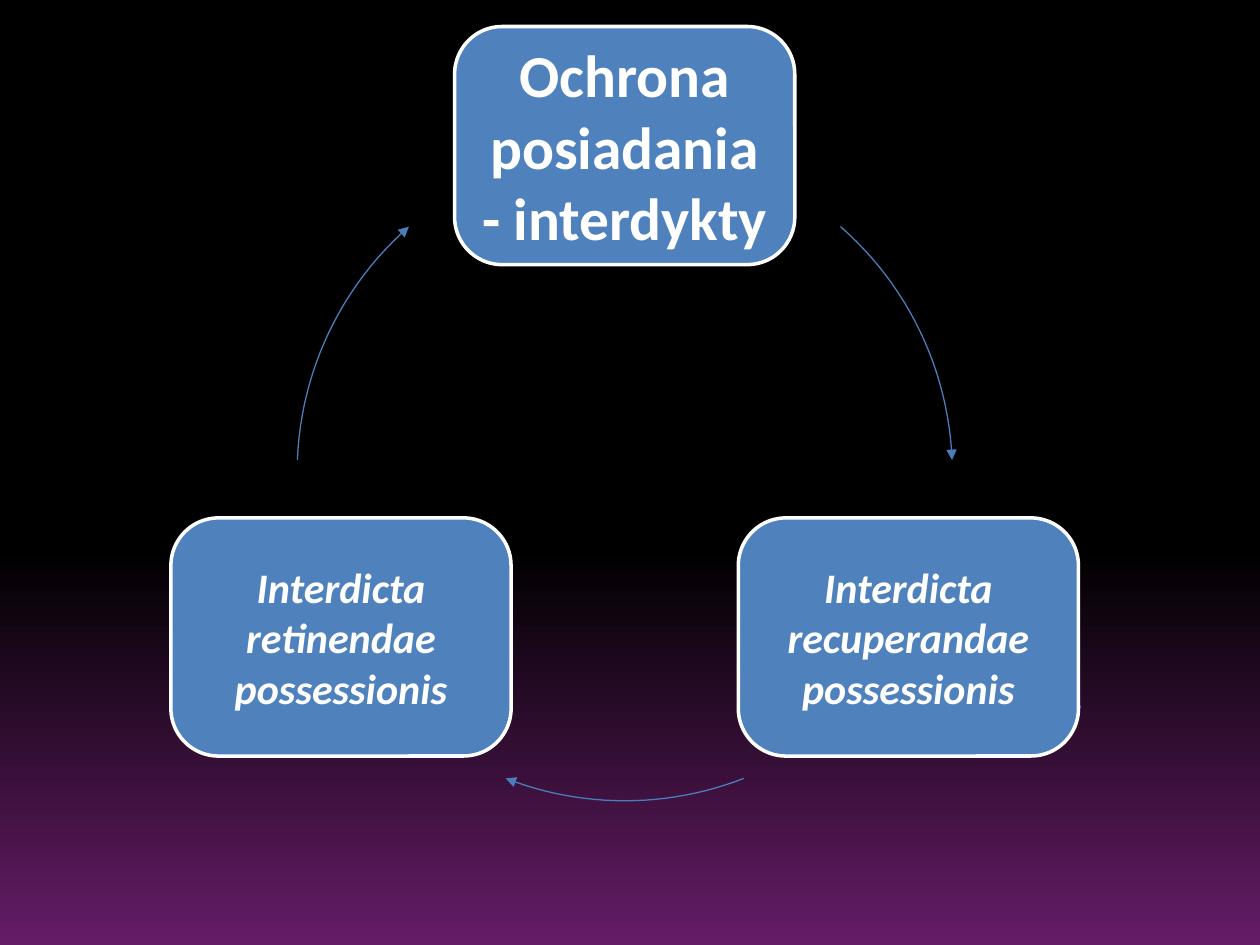
import math

import pptx
import pptx.dml.color
import pptx.enum.shapes
import pptx.enum.text
import pptx.oxml
import pptx.oxml.ns
import pptx.util

Pt = pptx.util.Pt

COLOURS = {
    "black": "000000",
    "purple": "641C66",
    "box": "4F81BD",
    "arrow": "4A7EBB",
    "white": "FFFFFF",
}

# The boxes and arrows share one circle; angles run clockwise from the right
CENTRE_X, CENTRE_Y, RADIUS = 357, 270.4, 187.2
BOX_WIDTH, BOX_HEIGHT = 194.4, 136.1
ARC_STEPS = 24

BOXES = [  # angle, text, font size, italic
    (-90, "Ochrona posiadania - interdykty", 34, False),
    (30, "Interdicta recuperandae possessionis", 24, True),
    (150, "Interdicta retinendae possessionis", 24, True),
]
ARROWS = [(-48.8, -2.3), (68.7, 111.3), (182.3, 228.8)]  # start and end angle


def colour(name):
    return pptx.dml.color.RGBColor.from_string(COLOURS[name])


def circle_point(angle):
    turn = math.radians(angle)
    return CENTRE_X + RADIUS * math.cos(turn), CENTRE_Y + RADIUS * math.sin(turn)


def paint_background(page):
    fill = page.background.fill
    fill.gradient()
    fill.gradient_angle = 270
    stops = [(0.58, "black"), (1, "purple")]
    for stop, (position, name) in zip(fill.gradient_stops, stops):
        stop.position = position
        stop.color.rgb = colour(name)


def add_box(page, angle, text, size, italic):
    x, y = circle_point(angle)
    box = page.shapes.add_shape(
        pptx.enum.shapes.MSO_SHAPE.ROUNDED_RECTANGLE,
        Pt(x - BOX_WIDTH / 2), Pt(y - BOX_HEIGHT / 2), Pt(BOX_WIDTH), Pt(BOX_HEIGHT))
    box.adjustments[0] = 0.2
    box.shadow.inherit = False
    box.fill.solid()
    box.fill.fore_color.rgb = colour("box")
    box.line.color.rgb = colour("white")
    box.line.width = Pt(2)

    frame = box.text_frame
    frame.word_wrap = True
    frame.vertical_anchor = pptx.enum.text.MSO_ANCHOR.MIDDLE
    frame.margin_left = frame.margin_right = Pt(3.6)
    frame.margin_top = frame.margin_bottom = Pt(3.6)
    para = frame.paragraphs[0]
    para.text = text
    para.alignment = pptx.enum.text.PP_ALIGN.CENTER
    para.font.name = "Calibri"
    para.font.size = Pt(size)
    para.font.bold = True
    para.font.italic = italic
    para.font.color.rgb = colour("white")


def add_arc_arrow(page, start, end):
    points = []
    for step in range(ARC_STEPS + 1):
        x, y = circle_point(start + (end - start) * step / ARC_STEPS)
        points.append((Pt(x), Pt(y)))
    builder = page.shapes.build_freeform(*points[0])
    builder.add_line_segments(points[1:], close=False)
    arrow = builder.convert_to_shape()
    arrow.shadow.inherit = False
    arrow.fill.background()
    arrow.line.color.rgb = colour("arrow")
    arrow.line.width = Pt(0.75)
    # Arrowhead at the end of the arc
    line = arrow.line._get_or_add_ln()
    line.append(pptx.oxml.parse_xml(
        f'<a:tailEnd {pptx.oxml.ns.nsdecls("a")} type="triangle"/>'))


def main():
    deck = pptx.Presentation()
    deck.slide_width, deck.slide_height = Pt(720), Pt(540)
    page = deck.slides.add_slide(deck.slide_layouts[6])
    paint_background(page)

    # Cycle: each box is followed by the arrow to the next one
    for box, arrow in zip(BOXES, ARROWS):
        add_box(page, *box)
        add_arc_arrow(page, *arrow)

    deck.save("out.pptx")


if __name__ == "__main__":
    main()
